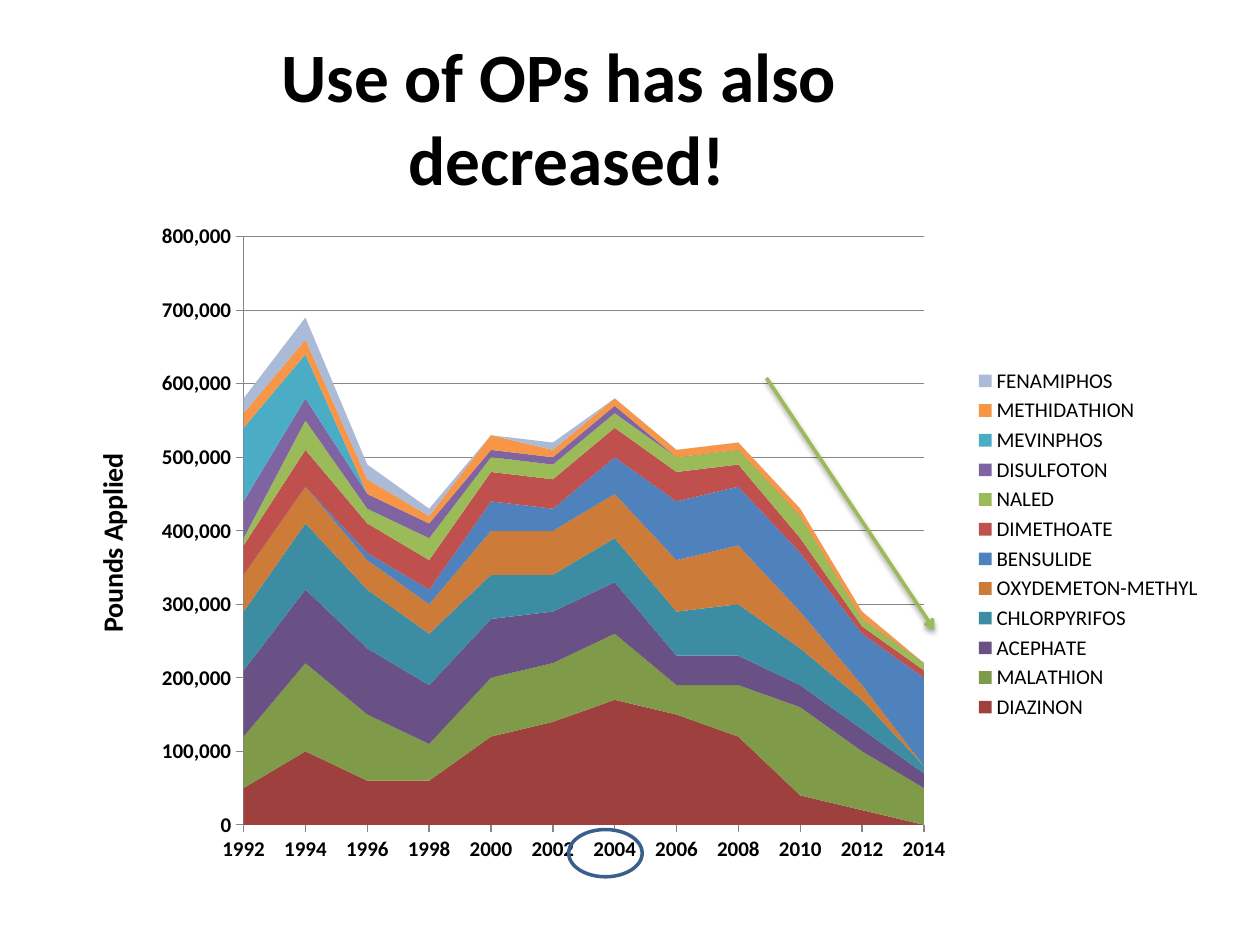
from lxml import etree
from pptx import Presentation
from pptx.chart.data import CategoryChartData
from pptx.dml.color import RGBColor
from pptx.enum import chart as ch, shapes, text
from pptx.oxml import parse_xml
from pptx.oxml.ns import nsdecls, qn
from pptx.util import Pt

TITLE = "Use of OPs has also \vdecreased!"
YEARS = [str(y) for y in range(1992, 2015, 2)]
UNIT = 10000
SERIES = [
    ("DIAZINON", "9E413E", [5, 10, 6, 6, 12, 14, 17, 15, 12, 4, 2, 0]),
    ("MALATHION", "7F9A48", [7, 12, 9, 5, 8, 8, 9, 4, 7, 12, 8, 5]),
    ("ACEPHATE", "695185", [9, 10, 9, 8, 8, 7, 7, 4, 4, 3, 3, 2]),
    ("CHLORPYRIFOS", "3C8DA3", [8, 9, 8, 7, 6, 5, 6, 6, 7, 5, 4, 1]),
    ("OXYDEMETON-METHYL", "CC7B38", [5, 5, 4, 4, 6, 6, 6, 7, 8, 5, 2, 0]),
    ("BENSULIDE", "4F81BD", [0, 0, 1, 2, 4, 3, 5, 8, 8, 8, 7, 12]),
    ("DIMETHOATE", "C0504D", [4, 5, 4, 4, 4, 4, 4, 4, 3, 2, 1, 1]),
    ("NALED", "9BBB59", [1, 4, 2, 3, 2, 2, 2, 2, 2, 3, 1, 1]),
    ("DISULFOTON", "8064A2", [5, 3, 2, 2, 1, 1, 1, 0, 0, 0, 0, 0]),
    ("MEVINPHOS", "4BACC6", [10, 6, 0, 0, 0, 0, 0, 0, 0, 0, 0, 0]),
    ("METHIDATHION", "F79646", [2, 2, 2, 1, 2, 1, 1, 1, 1, 1, 1, 0]),
    ("FENAMIPHOS", "AABAD7", [2, 3, 2, 1, 0, 1, 0, 0, 0, 0, 0, 0]),
]


def rgb(code):
    return RGBColor.from_string(code)


def style(font, size, bold=False, color="000000"):
    font.name, font.size, font.bold = "Calibri", Pt(size), bold
    font.color.rgb = rgb(color)


def write(frame, words, align=text.PP_ALIGN.CENTER, **fmt):
    frame.text = words
    para = frame.paragraphs[0]
    para.alignment = align
    for run in para.runs:
        style(run.font, **fmt)


def stroke(line, color, width):
    line.color.rgb, line.width = rgb(color), Pt(width)


def layout(node, index, inner=False, **box):
    for old in node.findall(qn("c:layout")):
        node.remove(old)
    lay = parse_xml(f"<c:layout {nsdecls('c')}><c:manualLayout/></c:layout>")
    items = [("layoutTarget", "inner")] if inner else []
    items += [("xMode", "edge"), ("yMode", "edge"), *box.items()]
    for tag, val in items:
        etree.SubElement(lay[0], qn("c:" + tag)).set("val", str(val))
    node.insert(index, lay)


def add_graph(slide):
    data = CategoryChartData(number_format="#,##0")
    data.categories = YEARS
    for name, _, vals in SERIES:
        data.add_series(name, [v * UNIT for v in vals])
    graph = slide.shapes.add_chart(
        ch.XL_CHART_TYPE.AREA_STACKED, Pt(42), Pt(120), Pt(648), Pt(382), data
    ).chart
    style(graph.font, 10)
    graph.has_title = False
    for area, (_, color, _) in zip(graph.plots[0].series, SERIES):
        area.format.fill.solid()
        area.format.fill.fore_color.rgb = rgb(color)

    years, pounds = graph.category_axis, graph.value_axis
    for axis in (years, pounds):
        style(axis.tick_labels.font, 12, True)
        axis.major_tick_mark = ch.XL_TICK_MARK.OUTSIDE
        axis.minor_tick_mark = ch.XL_TICK_MARK.NONE
        stroke(axis.format.line, "868686", 0.75)
    years.has_major_gridlines = False
    pounds.has_major_gridlines = True
    stroke(pounds.major_gridlines.format.line, "868686", 0.75)
    pounds.minimum_scale, pounds.maximum_scale = 0, 800000
    pounds.major_unit = 100000
    pounds.tick_labels.number_format = "#,##0"
    pounds.tick_labels.number_format_is_linked = False
    write(pounds.axis_title.text_frame, "Pounds Applied", size=16, bold=True)
    root = graph.element
    for cross in root.iter(qn("c:crossBetween")):
        cross.set("val", "midCat")

    graph.has_legend = True
    key = graph.legend
    key.position = ch.XL_LEGEND_POSITION.RIGHT
    key.include_in_layout = False
    style(key.font, 12)
    plot = next(root.iter(qn("c:plotArea")))
    layout(plot, 0, inner=True, x=0.15, y=0.04, w=0.6, h=0.88)
    layout(next(root.iter(qn("c:legend"))), 1, x=0.79, y=0.23, w=0.21, h=0.54)


def add_arrow(slide):
    arrow = slide.shapes.add_connector(
        shapes.MSO_CONNECTOR.STRAIGHT, Pt(438), Pt(216), Pt(534), Pt(360)
    )
    stroke(arrow.line, "9BBB59", 2)
    prop = arrow.line._get_or_add_ln()
    etree.SubElement(prop, qn("a:tailEnd")).set("type", "arrow")
    prop.getparent().append(parse_xml(
        f'<a:effectLst {nsdecls("a")}><a:outerShdw blurRad="{Pt(3.1)}" '
        f'dist="{Pt(1.6)}" dir="5400000" rotWithShape="0">'
        '<a:srgbClr val="000000"><a:alpha val="38000"/></a:srgbClr>'
        '</a:outerShdw></a:effectLst>'
    ))


def add_ring(slide):
    ring = slide.shapes.add_shape(
        shapes.MSO_SHAPE.OVAL, Pt(325), Pt(474), Pt(42), Pt(27)
    )
    ring.shadow.inherit = False
    ring.fill.background()
    stroke(ring.line, "3A5F8C", 2)


def main():
    deck = Presentation()
    deck.slide_width, deck.slide_height = Pt(720), Pt(540)
    slide = deck.slides.add_slide(deck.slide_layouts[5])
    head = slide.shapes.title
    head.left, head.top, head.width, head.height = Pt(0), Pt(21.6), Pt(648), Pt(90)
    head.text_frame.vertical_anchor = text.MSO_ANCHOR.MIDDLE
    write(head.text_frame, TITLE, size=39.6, bold=True)
    add_graph(slide)
    add_arrow(slide)
    add_ring(slide)
    deck.save("out.pptx")


if __name__ == "__main__":
    main()
